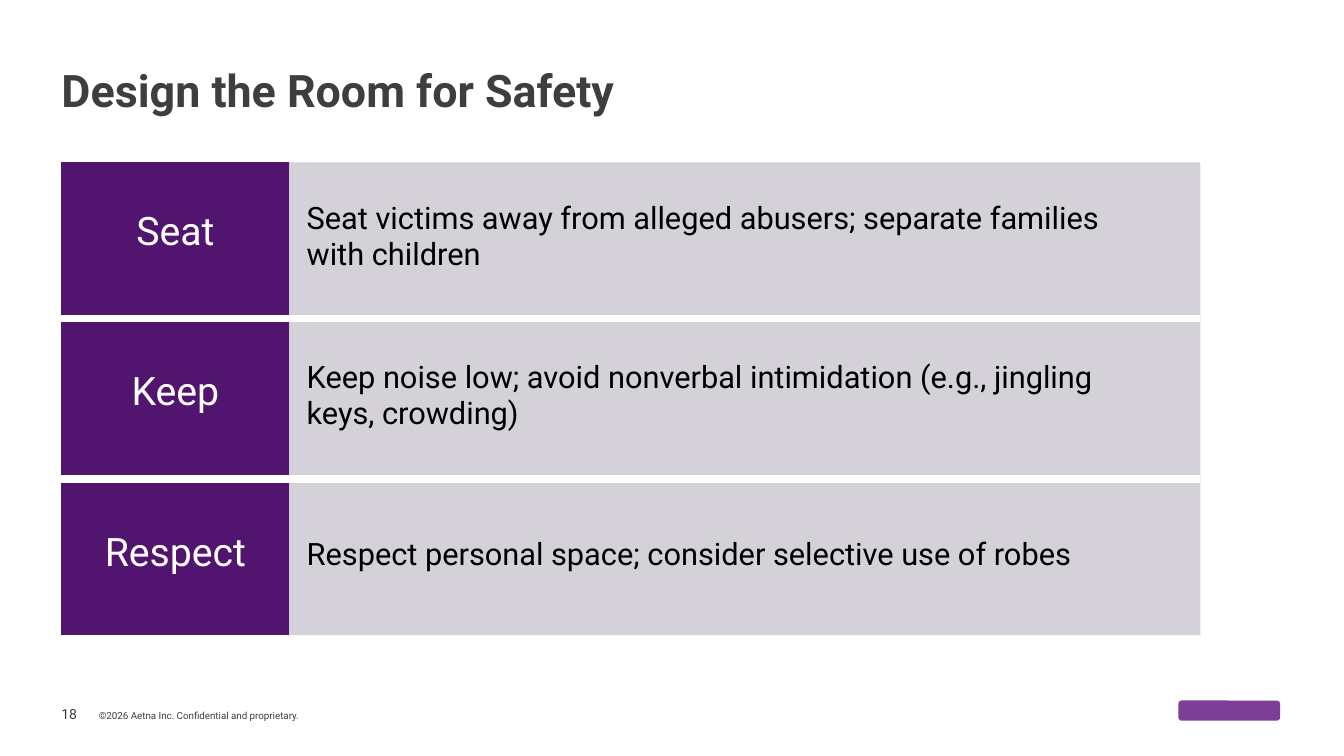
from dataclasses import dataclass

from lxml.etree import SubElement
from pptx import Presentation
from pptx.dml.color import RGBColor
from pptx.enum.shapes import MSO_SHAPE
from pptx.enum.text import MSO_ANCHOR, MSO_AUTO_SIZE, PP_ALIGN
from pptx.oxml import parse_xml
from pptx.oxml.ns import nsdecls, qn
from pptx.util import Pt

FONT = "Roboto"
COLORS = {
    "title": "3E3E3E",
    "label": "52156F",
    "body": "D1CCD4",
    "white": "FFFFFF",
    "black": "000000",
    "mark": "7C3E97",
}


@dataclass
class Row:
    label: str
    body: str
    height: float
    label_lift: float
    body_lift: float


ROWS = [
    Row("Seat", "Seat victims away from alleged abusers; separate families with children", 111.6, 12, 5),
    Row("Keep", "Keep noise low; avoid nonverbal intimidation (e.g., jingling keys, crowding)", 114.5, 10, 4),
    Row("Respect", "Respect personal space; consider selective use of robes", 111.6, 6, 3),
]
COLUMN_WIDTHS = [162.7, 650.9]
LEFT = 43.9


def add_run(p, text: str, size: float, color: str, bold: bool = False) -> None:
    r = p.add_run()
    r.text = text
    r.font.name = FONT
    r.font.size = Pt(size)
    r.font.bold = bold
    r.font.color.rgb = RGBColor.from_string(COLORS[color])


def clear_margins(tf) -> None:
    tf.margin_left = tf.margin_top = tf.margin_right = tf.margin_bottom = 0
    tf.word_wrap = True
    tf.auto_size = MSO_AUTO_SIZE.NONE


def fill_cell(cell, text: str, size: float, fill: str, color: str, lift: float):
    cell.fill.solid()
    cell.fill.fore_color.rgb = RGBColor.from_string(COLORS[fill])
    cell.vertical_anchor = MSO_ANCHOR.MIDDLE
    cell.margin_left = cell.margin_right = cell.margin_top = 0
    cell.margin_bottom = Pt(lift)
    p = cell.text_frame.paragraphs[0]
    add_run(p, text, size, color)
    return p


def set_borders(cell, borders: dict[str, tuple[str, float] | None]) -> None:
    tc_pr = cell._tc.get_or_add_tcPr()
    for i, side in enumerate("LRTB"):
        border = borders.get(side)
        if border:
            color, width = border
            paint = f'<a:solidFill><a:srgbClr val="{COLORS[color]}"/></a:solidFill>'
        else:
            width, paint = 0, "<a:noFill/>"
        ln = parse_xml(f'<a:ln{side} {nsdecls("a")} w="{Pt(width)}">{paint}</a:ln{side}>')
        tc_pr.insert(i, ln)


def add_title(s) -> None:
    sp = s.shapes.title
    sp.left, sp.top, sp.width, sp.height = Pt(LEFT), Pt(45), Pt(614), Pt(42)
    tf = sp.text_frame
    clear_margins(tf)
    tf.vertical_anchor = MSO_ANCHOR.TOP
    p = tf.paragraphs[0]
    p.alignment = PP_ALIGN.LEFT
    p.line_spacing = 1.0
    add_run(p, "Design the Room for Safety", 32, "title", bold=True)


def add_rows(s) -> None:
    height = sum(row.height for row in ROWS)
    frame = s.shapes.add_table(
        len(ROWS), 2, Pt(LEFT), Pt(115.9), Pt(sum(COLUMN_WIDTHS)), Pt(height)
    )
    table = frame.table
    table.first_row = table.horz_banding = False
    for column, width in zip(table.columns, COLUMN_WIDTHS):
        column.width = Pt(width)
    for i, row in enumerate(ROWS):
        table.rows[i].height = Pt(row.height)
        label, body = table.cell(i, 0), table.cell(i, 1)
        p = fill_cell(label, row.label, 28, "label", "white", row.label_lift)
        p.alignment = PP_ALIGN.CENTER
        p = fill_cell(body, row.body, 22, "body", "black", row.body_lift)
        p.line_spacing = Pt(26)
        body.margin_left, body.margin_right = Pt(12.5), Pt(60)
        for color in body._tc.tcPr.iter(qn("a:srgbClr")):
            SubElement(color, qn("a:alpha"), val="90000")
        gap = ("white", 6.25)
        gaps = {"T": gap if i > 0 else None, "B": gap if i < len(ROWS) - 1 else None}
        set_borders(label, {**gaps, "R": ("body", 0.25)})
        set_borders(body, {**gaps, "L": ("body", 0.25)})


def add_footer(s) -> None:
    sp = s.shapes.add_textbox(Pt(LEFT), Pt(504), Pt(200), Pt(14))
    tf = sp.text_frame
    clear_margins(tf)
    p = tf.paragraphs[0]
    tabs = SubElement(p._p.get_or_add_pPr(), qn("a:tabLst"))
    SubElement(tabs, qn("a:tab"), pos=str(Pt(26.7)), algn="l")
    add_run(p, "18\t", 10, "title")
    add_run(p, "©2026 Aetna Inc. Confidential and proprietary.", 7, "title")


def add_mark(s) -> None:
    sp = s.shapes.add_shape(
        MSO_SHAPE.ROUNDED_RECTANGLE, Pt(841.7), Pt(500.4), Pt(72.7), Pt(14.4)
    )
    sp.shadow.inherit = False
    sp.fill.solid()
    sp.fill.fore_color.rgb = RGBColor.from_string(COLORS["mark"])
    sp.line.fill.background()


def main() -> None:
    prs = Presentation()
    prs.slide_width, prs.slide_height = Pt(960), Pt(540)
    s = prs.slides.add_slide(prs.slide_layouts[5])
    add_mark(s)
    add_title(s)
    add_footer(s)
    add_rows(s)
    prs.save("out.pptx")


if __name__ == "__main__":
    main()
